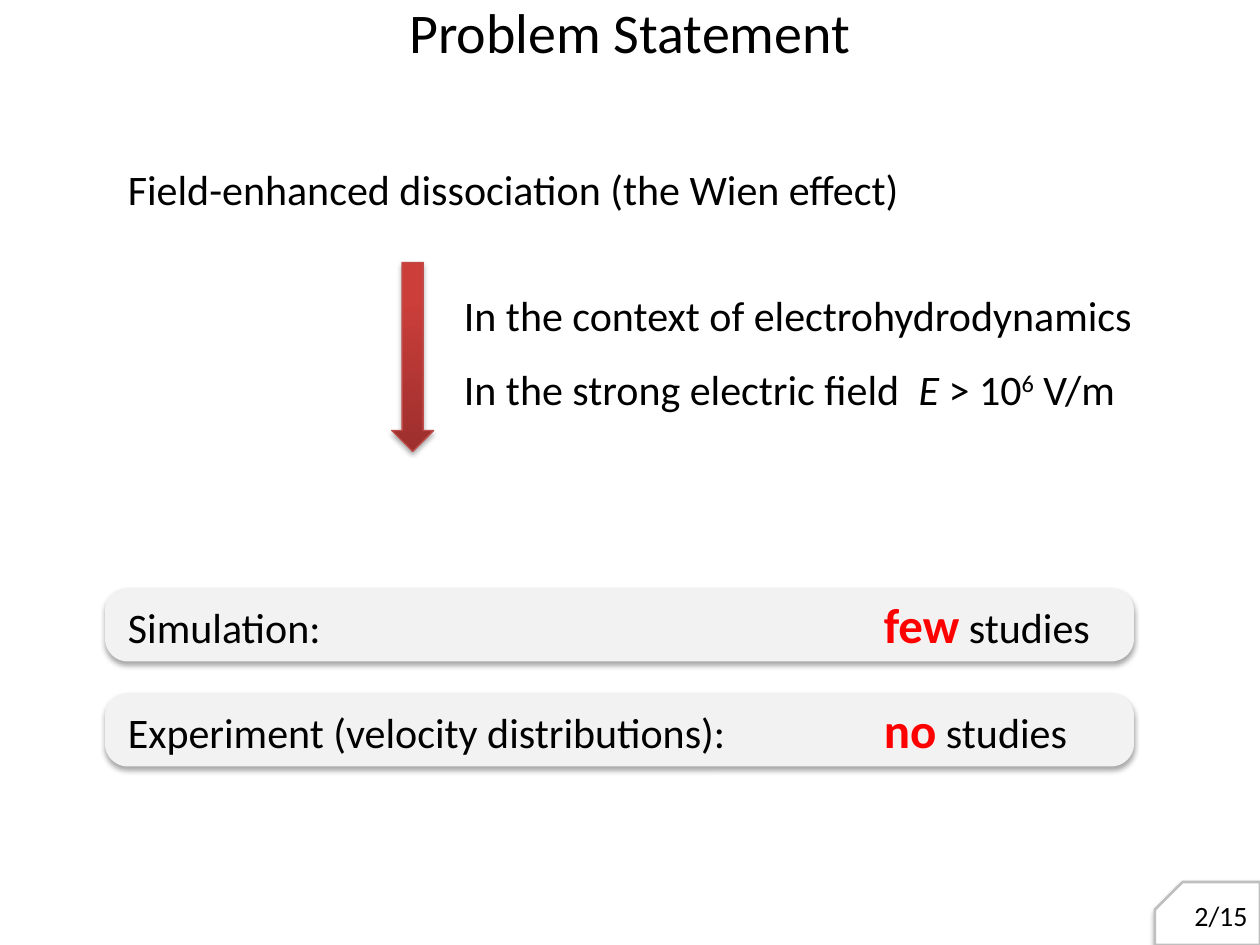
from lxml import etree
from pptx import Presentation
from pptx.dml.color import RGBColor
from pptx.enum.shapes import MSO_SHAPE
from pptx.enum.text import MSO_ANCHOR, PP_ALIGN
from pptx.oxml.ns import qn
from pptx.util import Inches, Pt

ROUNDED = MSO_SHAPE.ROUNDED_RECTANGLE
DOWN_ARROW = MSO_SHAPE.DOWN_ARROW
SNIPPED = MSO_SHAPE.SNIP_1_RECTANGLE
LEFT, CENTER, RIGHT = PP_ALIGN.LEFT, PP_ALIGN.CENTER, PP_ALIGN.RIGHT
TOP, MIDDLE = MSO_ANCHOR.TOP, MSO_ANCHOR.MIDDLE

COLUMNS, ROWS = 120, 90
TEXT_COLUMN, CONTEXT_COLUMN = 11, 43
FINDINGS = [
    (56, "Simulation:", "few"),
    (66, "Experiment (velocity distributions):", "no"),
]


def color(hex_string):
    return RGBColor.from_string(hex_string)


class SlideBuilder:
    """Holds the style and the slide; boxes are (column, row, columns, rows)."""

    font_name = "Calibri"
    text_color = "000000"
    emphasis_color = "FF0000"
    text_size = 24
    emphasis_size = 28

    def __init__(self, presentation):
        self.column = presentation.slide_width / COLUMNS
        self.row = presentation.slide_height / ROWS
        self.slide = presentation.slides.add_slide(presentation.slide_layouts[6])

    def place(self, box):
        units = (self.column, self.row) * 2
        return [round(count * unit) for count, unit in zip(box, units)]

    def shape(self, kind, box, fill=None, line=None, line_width=0.75, adjustment=None):
        shape = self.slide.shapes.add_shape(kind, *self.place(box))
        if adjustment is not None:
            shape.adjustments[0] = adjustment
        if fill:
            shape.fill.solid()
            shape.fill.fore_color.rgb = color(fill)
        if line:
            shape.line.color.rgb = color(line)
            shape.line.width = Pt(line_width)
        else:
            shape.line.fill.background()
        self.add_shadow(shape)
        return shape

    def add_shadow(self, shape):
        shape.shadow.inherit = False
        effects = shape._element.spPr.find(qn("a:effectLst"))
        shadow = etree.SubElement(
            effects, qn("a:outerShdw"), blurRad="40000", dist="23000",
            dir="5400000", rotWithShape="0")
        black = etree.SubElement(shadow, qn("a:srgbClr"), val="000000")
        etree.SubElement(black, qn("a:alpha"), val="35000")

    def gradient_arrow(self, box, bottom, top, line):
        arrow = self.shape(DOWN_ARROW, box, line=line)
        arrow.fill.gradient()
        arrow.fill.gradient_angle = 90
        for stop, position, value in zip(arrow.fill.gradient_stops, (0, 0.8), (bottom, top)):
            stop.position = position
            stop.color.rgb = color(value)

    def page_corner(self, box):
        corner = self.shape(SNIPPED, box, "FFFFFF", "BFBFBF", 1.5, adjustment=0.44)
        corner._element.spPr.xfrm.set("flipH", "1")

    def text(self, box, *parts, size=text_size, align=LEFT, anchor=TOP):
        """Adds one paragraph and returns it; each part becomes a run."""
        frame = self.slide.shapes.add_textbox(*self.place(box)).text_frame
        frame.word_wrap = True
        frame.vertical_anchor = anchor
        paragraph = frame.paragraphs[0]
        paragraph.alignment = align
        paragraph.font.name = self.font_name
        paragraph.font.size = Pt(size)
        paragraph.font.color.rgb = color(self.text_color)
        for part in parts:
            paragraph.add_run().text = part
        return paragraph

    def finding(self, row, topic, amount):
        self.shape(ROUNDED, (10, row, 98, 7), "F2F2F2", adjustment=0.31)
        paragraph = self.text((TEXT_COLUMN, row, 112, 7), topic + "\t", amount, " studies")
        tabs = etree.Element(qn("a:tabLst"))
        etree.SubElement(tabs, qn("a:tab"), pos=str(Inches(6)), algn="l")
        paragraph._p.get_or_add_pPr().insert(0, tabs)
        emphasis = paragraph.runs[1].font
        emphasis.size = Pt(self.emphasis_size)
        emphasis.bold = True
        emphasis.color.rgb = color(self.emphasis_color)


def main():
    presentation = Presentation()
    presentation.slide_width, presentation.slide_height = Inches(10), Inches(7.5)
    builder = SlideBuilder(presentation)

    builder.text((6, 0, 108, 6), "Problem Statement", size=32, align=CENTER, anchor=MIDDLE)
    builder.text((TEXT_COLUMN, 15, 108, 6), "Field-enhanced dissociation (the Wien effect)")

    builder.gradient_arrow((37.3, 25, 4, 18), bottom="9C2F2D", top="CB3E3A", line="BF4C48")
    builder.text((CONTEXT_COLUMN, 27, 71, 6), "In the context of electrohydrodynamics")
    field = builder.text((CONTEXT_COLUMN, 34, 71, 6),
                         "In the strong electric field  ", "E", " > 10", "6", " V/m")
    field.runs[1].font.italic = True
    field.runs[3].font._element.set("baseline", "30000")

    for row, topic, amount in FINDINGS:
        builder.finding(row, topic, amount)

    builder.page_corner((110, 84, 10, 6))
    builder.text((111, 84.8, 9, 4.8), "2/15", size=16, align=RIGHT, anchor=MIDDLE)
    presentation.save("out.pptx")


if __name__ == "__main__":
    main()
